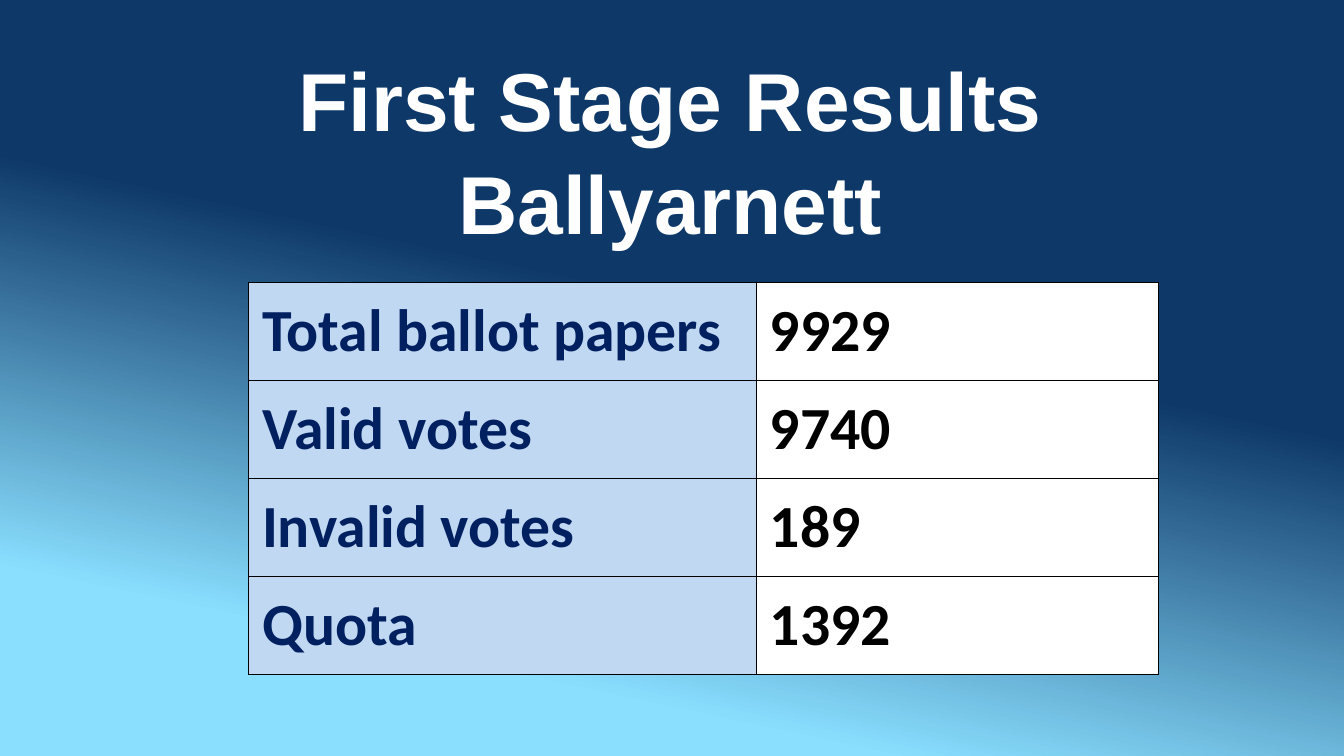
from lxml import etree
from pptx import Presentation
from pptx import util as u
from pptx.dml.color import RGBColor
from pptx.enum import text
from pptx.oxml.ns import qn

Pt = u.Pt

# Content
TITLE = ["First Stage Results", "Ballyarnett"]
RESULTS = [
    ("Total ballot papers", "9929"),
    ("Valid votes", "9740"),
    ("Invalid votes", "189"),
    ("Quota", "1392"),
]

# Colours
NAVY = RGBColor(0x0D, 0x38, 0x68)
SKY = RGBColor(0x8A, 0xDF, 0xFF)
LABEL_BLUE = RGBColor(0x00, 0x20, 0x60)
LABEL_FILL = RGBColor(0xC1, 0xD8, 0xF2)
WHITE = RGBColor(0xFF, 0xFF, 0xFF)
BLACK = RGBColor(0x00, 0x00, 0x00)

# Formats
TITLE_FONT = dict(name="Arial", size=Pt(44), bold=True)
TABLE_FONT = dict(name="Calibri", size=Pt(32), bold=True)
COLUMNS = [(272, LABEL_BLUE, LABEL_FILL), (215.5, BLACK, WHITE)]
TABLE_LEFT, TABLE_TOP, ROW_HEIGHT = 133.2, 151.2, 52.5


def set_font(font, values, color):
    for name, value in values.items():
        setattr(font, name, value)
    font.color.rgb = color


def add_borders(cell, width, color):
    properties = cell._tc.get_or_add_tcPr()
    for index, side in enumerate(("lnL", "lnR", "lnT", "lnB")):
        line = etree.Element(qn(f"a:{side}"), w=str(width))
        fill = etree.SubElement(line, qn("a:solidFill"))
        etree.SubElement(fill, qn("a:srgbClr"), val=str(color))
        properties.insert(index, line)


deck = Presentation()
deck.slide_width, deck.slide_height = Pt(720), Pt(405)
slide = deck.slides.add_slide(deck.slide_layouts[6])

# Background gradient
background = slide.background.fill
background.gradient()
background.gradient_angle = 360 - 102
for stop, (position, color) in zip(background.gradient_stops, [(0.42, NAVY), (0.82, SKY)]):
    stop.position = position
    stop.color.rgb = color

# Title
title = slide.shapes.add_textbox(0, Pt(26.6), Pt(720), Pt(108)).text_frame
frame_format = dict(word_wrap=True, vertical_anchor=text.MSO_ANCHOR.BOTTOM,
                    margin_left=0, margin_top=0, margin_right=Pt(1.5), margin_bottom=0)
for name, value in frame_format.items():
    setattr(title, name, value)
title.text = "\n".join(TITLE)
for paragraph in title.paragraphs:
    paragraph.alignment = text.PP_ALIGN.CENTER
    paragraph.line_spacing = 1.05
    set_font(paragraph.runs[0].font, TITLE_FONT, WHITE)

# Results table
table_width = sum(width for width, _, _ in COLUMNS)
results = slide.shapes.add_table(
    len(RESULTS), len(COLUMNS), Pt(TABLE_LEFT), Pt(TABLE_TOP),
    Pt(table_width), Pt(ROW_HEIGHT * len(RESULTS))).table
results.first_row = results.horz_banding = False
for column, (width, _, _) in zip(results.columns, COLUMNS):
    column.width = Pt(width)
for row, entries in zip(results.rows, RESULTS):
    row.height = Pt(ROW_HEIGHT)
    for cell, entry, (_, color, fill) in zip(row.cells, entries, COLUMNS):
        cell.text = entry
        cell.vertical_anchor = text.MSO_ANCHOR.MIDDLE
        cell.fill.solid()
        cell.fill.fore_color.rgb = fill
        set_font(cell.text_frame.paragraphs[0].runs[0].font, TABLE_FONT, color)
        add_borders(cell, Pt(0.5), BLACK)

deck.save("out.pptx")
